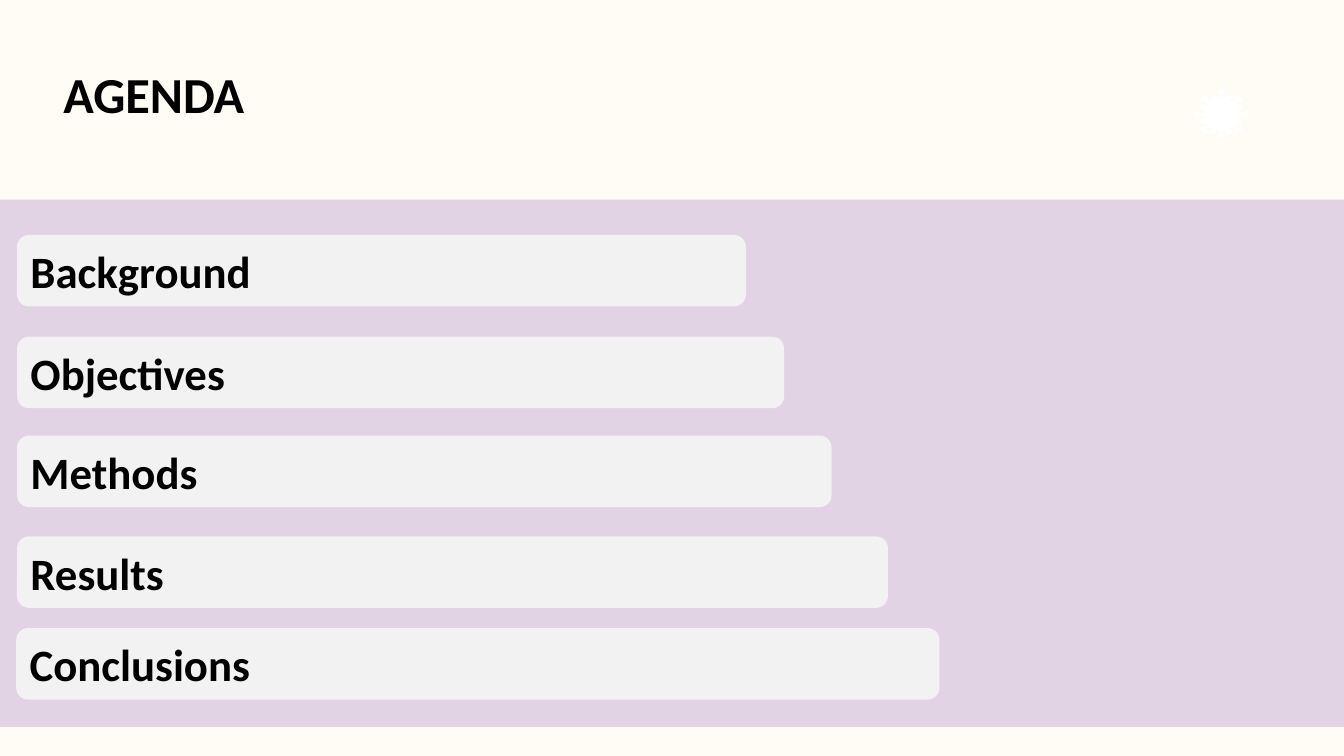
from math import cos, pi, sin

from lxml.etree import SubElement
from pptx import Presentation
from pptx.dml.color import RGBColor
from pptx.enum.shapes import MSO_SHAPE
from pptx.enum.text import MSO_ANCHOR, PP_ALIGN
from pptx.oxml.ns import qn
from pptx.util import Pt

COLORS = {
    "page": "FFFCF5",
    "band": "7030A0",
    "bar": "F2F2F2",
    "text": "000000",
    "virus": "FFFFFF",
}
AGENDA = [
    ("Background", 12.2, 25.2, 520.6),
    ("Objectives", 12.2, 97.9, 547.9),
    ("Methods", 12.2, 168.5, 581.8),
    ("Results", 12.2, 240.5, 622.1),
    ("Conclusions", 11.6, 306, 659.5),
]
BAR_HEIGHT = 51.1


def paint(sp, color):
    sp.fill.solid()
    sp.fill.fore_color.rgb = RGBColor.from_string(COLORS[color])
    sp.line.fill.background()
    sp.shadow.inherit = False


def write(sp, text, size):
    tf = sp.text_frame
    tf.word_wrap = True
    tf.vertical_anchor = MSO_ANCHOR.MIDDLE
    p = tf.paragraphs[0]
    p.alignment = PP_ALIGN.LEFT
    r = p.add_run()
    r.text = text
    formats = {"name": "Calibri", "size": Pt(size), "bold": True}
    for name, value in formats.items():
        setattr(r.font, name, value)
    r.font.color.rgb = RGBColor.from_string(COLORS["text"])


def add_shape(s, kind, left, top, width, height, color):
    sp = s.shapes.add_shape(kind, Pt(left), Pt(top), Pt(width), Pt(height))
    paint(sp, color)
    return sp


def add_outline(group, points):
    points = [(Pt(x), Pt(y)) for x, y in points]
    builder = group.shapes.build_freeform(*points[0], scale=1.0)
    builder.add_line_segments(points[1:], close=True)
    paint(builder.convert_to_shape(), "virus")


def add_title(s, left, top, width, height):
    sp = s.shapes.add_textbox(Pt(left), Pt(top), Pt(width), Pt(height))
    write(sp, "AGENDA", 36)


def add_virus(s, left, top, width, height):
    group = s.shapes.add_group_shape()
    cx, cy = left + width / 2, top + height / 2
    for i in range(16):
        angle = i * pi / 8
        reach, knob = (1, 2.8) if i % 2 == 0 else (0.84, 2)
        outer = reach * height / 2
        half = [(10.5, 1), (outer - 3, 1), (outer - 2.5, knob),
                (outer - 0.5, knob), (outer, knob / 2)]
        profile = half + [(d, -w) for d, w in reversed(half)]
        add_outline(group, [
            (cx + (d * sin(angle) + w * cos(angle)) * width / height,
             cy - d * cos(angle) + w * sin(angle))
            for d, w in profile])
    add_outline(group, [
        (cx + 0.34 * width * cos(i * pi / 18),
         cy + 0.34 * height * sin(i * pi / 18))
        for i in range(36)])


def add_agenda(s, left, top, width, height):
    band = add_shape(s, MSO_SHAPE.RECTANGLE, left, top, width, height, "band")
    color = band.fill._xPr.find(qn("a:solidFill"))[0]
    SubElement(color, qn("a:alpha"), val="20000")
    for text, dx, dy, bar_width in AGENDA:
        bar = add_shape(s, MSO_SHAPE.ROUNDED_RECTANGLE, left + dx, top + dy,
                        bar_width, BAR_HEIGHT, "bar")
        write(bar, text, 32)


def main():
    prs = Presentation()
    prs.slide_width, prs.slide_height = Pt(960), Pt(540)
    s = prs.slides.add_slide(prs.slide_layouts[6])
    s.background.fill.solid()
    s.background.fill.fore_color.rgb = RGBColor.from_string(COLORS["page"])
    add_virus(s, 853.2, 64, 38.2, 35.4)
    add_agenda(s, 0, 142.6, 960, 376.6)
    add_title(s, 38.2, 41, 573.1, 51.1)
    prs.save("out.pptx")


if __name__ == "__main__":
    main()
